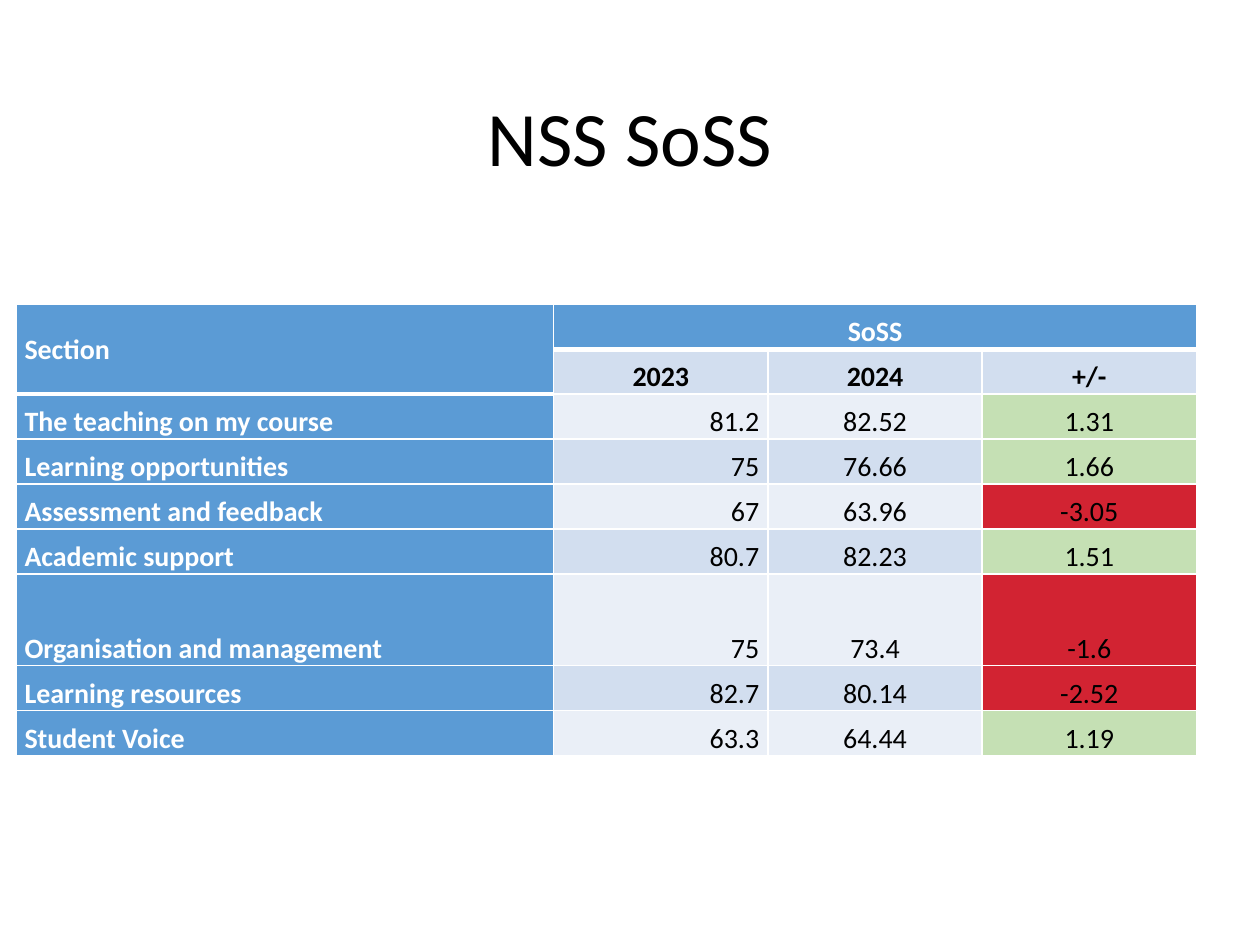
from typing import NamedTuple

from lxml.etree import SubElement
from pptx import Presentation
from pptx.dml.color import RGBColor
from pptx.enum.text import MSO_ANCHOR as Anchor, PP_ALIGN as Align
from pptx.oxml.ns import qn
from pptx.util import Inches, Pt

WIDTH, HEIGHT = 10, 7.5
BLUE, BAND_DARK, BAND_LIGHT = "5B9BD5", "D2DEEF", "EAEFF7"
GREEN, RED, WHITE, BLACK = "C5E0B4", "D22332", "FFFFFF", "000000"
COLUMN_WIDTHS = (4.27, 1.7, 1.7, 1.7)
ROW_HEIGHT = 0.357
HEADER_ROWS = 2
TALL_ROW = 6


class Score(NamedTuple):
    """One survey section with its yearly scores and their difference."""
    section: str
    last_year: str
    this_year: str
    change: str


SCORES = (
    Score("The teaching on my course", "81.2", "82.52", "1.31"),
    Score("Learning opportunities", "75", "76.66", "1.66"),
    Score("Assessment and feedback", "67", "63.96", "-3.05"),
    Score("Academic support", "80.7", "82.23", "1.51"),
    Score("Organisation and management", "75", "73.4", "-1.6"),
    Score("Learning resources", "82.7", "80.14", "-2.52"),
    Score("Student Voice", "63.3", "64.44", "1.19"),
)


def color(value: str) -> RGBColor:
    """Turn a hex string into a colour."""
    return RGBColor.from_string(value)


def write(frame, text: str, *, size=16, ink=BLACK, bold=False,
          align=Align.CENTER, spacing=1.07, after=8) -> None:
    """Write one formatted paragraph into a text frame."""
    paragraph = frame.paragraphs[0]
    paragraph.alignment = align
    paragraph.line_spacing = spacing
    paragraph.space_after = Pt(after)
    run = paragraph.add_run()
    run.text = text
    run.font.name, run.font.size, run.font.bold = "Calibri", Pt(size), bold
    run.font.color.rgb = color(ink)


def style_cell(cell, fill: str, anchor=Anchor.BOTTOM, top=1, bottom=1) -> None:
    """Give a cell its margins, white borders and fill."""
    cell.margin_left = cell.margin_right = Inches(0.07)
    cell.margin_top = cell.margin_bottom = 0
    cell.vertical_anchor = anchor
    properties = cell._tc.get_or_add_tcPr()
    for side, width in zip("LRTB", (1, 1, top, bottom)):
        line = SubElement(properties, qn(f"a:ln{side}"), w=str(Pt(width)))
        solid = SubElement(line, qn("a:solidFill"))
        SubElement(solid, qn("a:srgbClr"), val=WHITE)
    cell.fill.solid()
    cell.fill.fore_color.rgb = color(fill)


def add_title(slide, text: str) -> None:
    """Add the centred slide title."""
    box = slide.shapes.add_textbox(Inches(0.069 * WIDTH), Inches(0.053 * HEIGHT),
                                   Inches(0.862 * WIDTH), Inches(0.193 * HEIGHT))
    box.text_frame.word_wrap = True
    box.text_frame.vertical_anchor = Anchor.MIDDLE
    write(box.text_frame, text, size=44, spacing=0.9, after=0)


def fill_header(table) -> None:
    """Fill the two merged heading rows."""
    for row in range(HEADER_ROWS):
        style_cell(table.cell(row, 0), BLUE, Anchor.MIDDLE, bottom=3)
    for column in range(1, len(COLUMN_WIDTHS)):
        style_cell(table.cell(0, column), BLUE, bottom=3)
        style_cell(table.cell(1, column), BAND_DARK, top=3)
    table.cell(0, 0).merge(table.cell(1, 0))
    table.cell(0, 1).merge(table.cell(0, 3))
    write(table.cell(0, 0).text_frame, "Section", ink=WHITE, bold=True, align=Align.LEFT)
    write(table.cell(0, 1).text_frame, "SoSS", ink=WHITE, bold=True)
    for column, label in enumerate(("2023", "2024", "+/-"), 1):
        write(table.cell(1, column).text_frame, label, bold=True)


def fill_score(table, row: int, score: Score) -> None:
    """Fill one row of scores, with its change in green or red."""
    band = BAND_DARK if row % 2 else BAND_LIGHT
    change_fill = RED if float(score.change) < 0 else GREEN
    aligns = (Align.LEFT, Align.RIGHT, Align.CENTER, Align.CENTER)
    fills = (BLUE, band, band, change_fill)
    for column, (text, align, fill) in enumerate(zip(score, aligns, fills)):
        cell = table.cell(row, column)
        heading = column == 0
        plain = align == Align.RIGHT
        style_cell(cell, fill, top=3 if heading and row == HEADER_ROWS else 1)
        write(cell.text_frame, text, ink=WHITE if heading else BLACK, bold=heading,
              align=align, spacing=1 if plain else 1.07, after=0 if plain else 8)


def add_score_table(slide) -> None:
    """Add the table of scores."""
    rows = HEADER_ROWS + len(SCORES)
    frame = slide.shapes.add_table(rows, len(COLUMN_WIDTHS),
                                   Inches(0.0125 * WIDTH), Inches(0.322 * HEIGHT),
                                   Inches(sum(COLUMN_WIDTHS)),
                                   Inches((rows + 1) * ROW_HEIGHT))
    table = frame.table
    for column, width in zip(table.columns, COLUMN_WIDTHS):
        column.width = Inches(width)
    for index, row in enumerate(table.rows):
        row.height = Inches(ROW_HEIGHT * (2.04 if index == TALL_ROW else 1))
    fill_header(table)
    for row, score in enumerate(SCORES, HEADER_ROWS):
        fill_score(table, row, score)


def main() -> None:
    """Build and save the slide."""
    presentation = Presentation()
    presentation.slide_width, presentation.slide_height = Inches(WIDTH), Inches(HEIGHT)
    slide = presentation.slides.add_slide(presentation.slide_layouts[6])
    add_title(slide, "NSS SoSS")
    add_score_table(slide)
    presentation.save("out.pptx")


if __name__ == "__main__":
    main()
